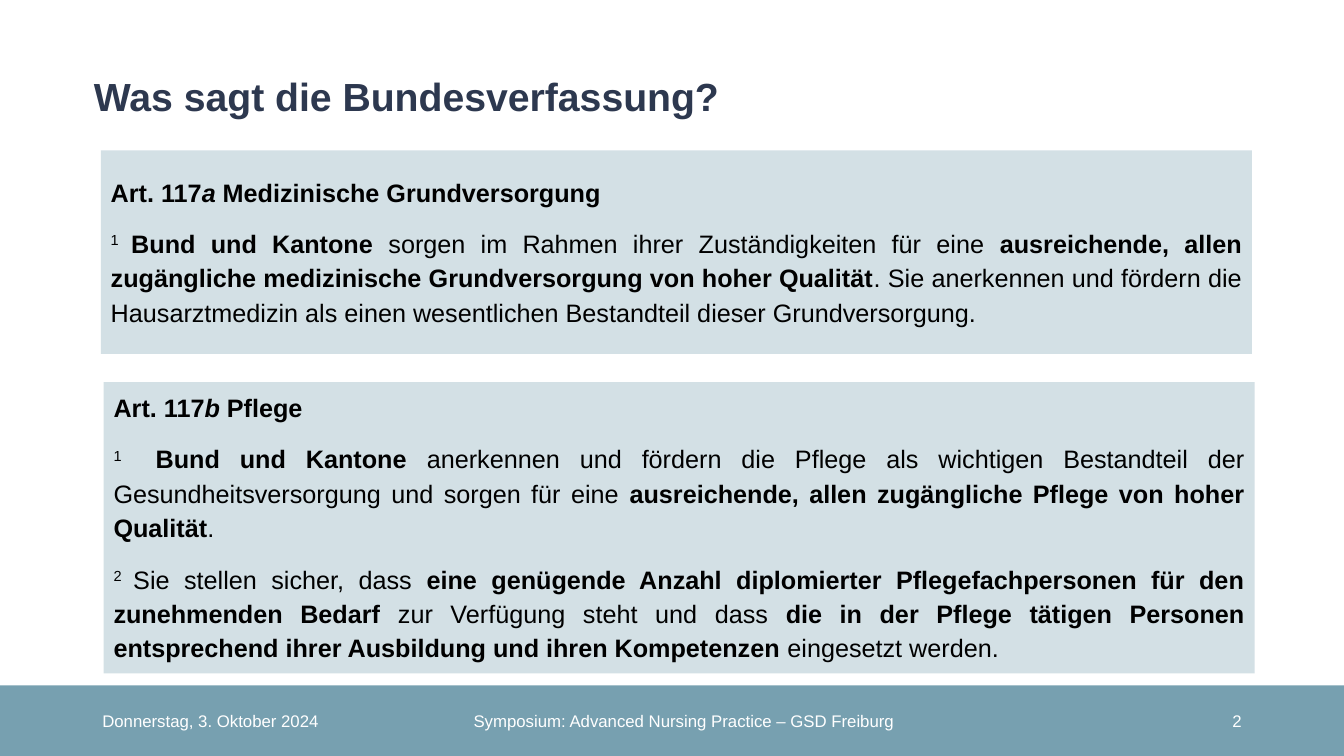
from dataclasses import dataclass

from pptx import Presentation
from pptx.dml.color import RGBColor
from pptx.enum.shapes import MSO_SHAPE
from pptx.enum.text import MSO_ANCHOR, PP_ALIGN
from pptx.shapes.autoshape import Shape
from pptx.slide import Slide
from pptx.text.text import TextFrame
from pptx.util import Pt

RECTANGLE = MSO_SHAPE.RECTANGLE
TOP, MIDDLE = MSO_ANCHOR.TOP, MSO_ANCHOR.MIDDLE
LEFT, CENTER, RIGHT, JUSTIFY = PP_ALIGN.LEFT, PP_ALIGN.CENTER, PP_ALIGN.RIGHT, PP_ALIGN.JUSTIFY


@dataclass(frozen=True)
class Theme:
    font: str = "Arial"
    title_color: str = "2D384F"
    text_color: str = "000000"
    footer_color: str = "FFFFFF"
    band_fill: str = "77A0B0"
    panel_fill: str = "D3E0E5"
    title_size: float = 28
    text_size: float = 18
    footer_size: float = 12
    paragraph_gap: float = 12
    article_spacing: float = 1.14


THEME = Theme()


@dataclass(frozen=True)
class Area:
    left: float
    top: float
    width: float
    height: float

    def in_points(self) -> list[Pt]:
        return [Pt(self.left), Pt(self.top), Pt(self.width), Pt(self.height)]


@dataclass(frozen=True)
class Span:
    text: str
    bold: bool = False
    italic: bool = False
    raised: bool = False


@dataclass(frozen=True)
class Para:
    spans: list[Span]
    alignment: PP_ALIGN = LEFT
    line_spacing: float = 1.0


@dataclass(frozen=True)
class Article:
    area: Area
    letter: str
    heading: str
    clauses: list[list[Span]]


@dataclass(frozen=True)
class FooterItem:
    area: Area
    text: str
    alignment: PP_ALIGN


ARTICLES = [
    Article(Area(72, 107.5, 822.2, 145.4), "a", "Medizinische Grundversorgung", [
        [
            Span("1 ", raised=True),
            Span("Bund und Kantone", bold=True),
            Span(" sorgen im Rahmen ihrer Zuständigkeiten für eine "),
            Span("ausreichende, allen zugängliche medizinische Grundversorgung "
                 "von hoher Qualität", bold=True),
            Span(". Sie anerkennen und fördern die Hausarztmedizin als einen "
                 "wesentlichen Bestandteil dieser Grundversorgung."),
        ],
    ]),
    Article(Area(74, 272.9, 822.2, 208.1), "b", "Pflege", [
        [
            Span("1  ", raised=True),
            Span("Bund und Kantone ", bold=True),
            Span("anerkennen und fördern die Pflege als wichtigen Bestandteil der "
                 "Gesundheitsversorgung und sorgen für eine "),
            Span("ausreichende, allen zugängliche Pflege von hoher Qualität", bold=True),
            Span("."),
        ],
        [
            Span("2 ", raised=True),
            Span("Sie stellen sicher, dass "),
            Span("eine genügende Anzahl diplomierter Pflegefachpersonen für den "
                 "zunehmenden Bedarf ", bold=True),
            Span("zur Verfügung steht und dass "),
            Span("die in der Pflege tätigen Personen entsprechend ihrer Ausbildung "
                 "und ihren Kompetenzen", bold=True),
            Span(" eingesetzt werden."),
        ],
    ]),
]

FOOTER = [
    FooterItem(Area(66, 500.5, 216, 28.8), "Donnerstag, 3. Oktober 2024", LEFT),
    FooterItem(Area(318, 500.5, 341.3, 28.8),
               "Symposium: Advanced Nursing Practice – GSD Freiburg", CENTER),
    FooterItem(Area(678, 500.5, 216, 28.8), "2", RIGHT),
]


def write_paragraphs(frame: TextFrame, paras: list[Para], size: float, color: str,
                     anchor: MSO_ANCHOR) -> None:
    frame.word_wrap = True
    frame.vertical_anchor = anchor
    for index, para in enumerate(paras):
        paragraph = frame.add_paragraph() if index else frame.paragraphs[0]
        is_last = index == len(paras) - 1
        layout = {
            "alignment": para.alignment,
            "line_spacing": para.line_spacing,
            "space_after": Pt(0 if is_last else THEME.paragraph_gap),
        }
        for name, value in layout.items():
            setattr(paragraph, name, value)
        for span in para.spans:
            run = paragraph.add_run()
            run.text = span.text
            formats = {"name": THEME.font, "size": Pt(size),
                       "bold": span.bold, "italic": span.italic}
            for name, value in formats.items():
                setattr(run.font, name, value)
            run.font.color.rgb = RGBColor.from_string(color)
            if span.raised:
                run._r.get_or_add_rPr().set("baseline", "30000")


def add_panel(page: Slide, area: Area, fill: str) -> Shape:
    panel = page.shapes.add_shape(RECTANGLE, *area.in_points())
    panel.shadow.inherit = False
    panel.fill.solid()
    panel.fill.fore_color.rgb = RGBColor.from_string(fill)
    panel.line.fill.background()
    return panel


def add_label(page: Slide, area: Area, para: Para, size: float, color: str,
              anchor: MSO_ANCHOR) -> None:
    box = page.shapes.add_textbox(*area.in_points())
    write_paragraphs(box.text_frame, [para], size, color, anchor)


def add_article(page: Slide, article: Article) -> None:
    heading = Para([Span("Art. 117", bold=True),
                    Span(article.letter, bold=True, italic=True),
                    Span(f" {article.heading}", bold=True)])
    clauses = [Para(spans, JUSTIFY, THEME.article_spacing) for spans in article.clauses]
    panel = add_panel(page, article.area, THEME.panel_fill)
    write_paragraphs(panel.text_frame, [heading, *clauses],
                     THEME.text_size, THEME.text_color, MIDDLE)


def main() -> None:
    deck = Presentation()
    deck.slide_width, deck.slide_height = Pt(960), Pt(540)
    page = deck.slides.add_slide(deck.slide_layouts[6])
    add_panel(page, Area(0, 489.6, 960, 50.4), THEME.band_fill)
    title = Para([Span("Was sagt die Bundesverfassung?", bold=True)], line_spacing=0.9)
    add_label(page, Area(60, 52, 849.6, 30.2), title,
              THEME.title_size, THEME.title_color, TOP)
    for item in FOOTER:
        add_label(page, item.area, Para([Span(item.text)], item.alignment),
                  THEME.footer_size, THEME.footer_color, MIDDLE)
    for article in ARTICLES:
        add_article(page, article)
    deck.save("out.pptx")


if __name__ == "__main__":
    main()
